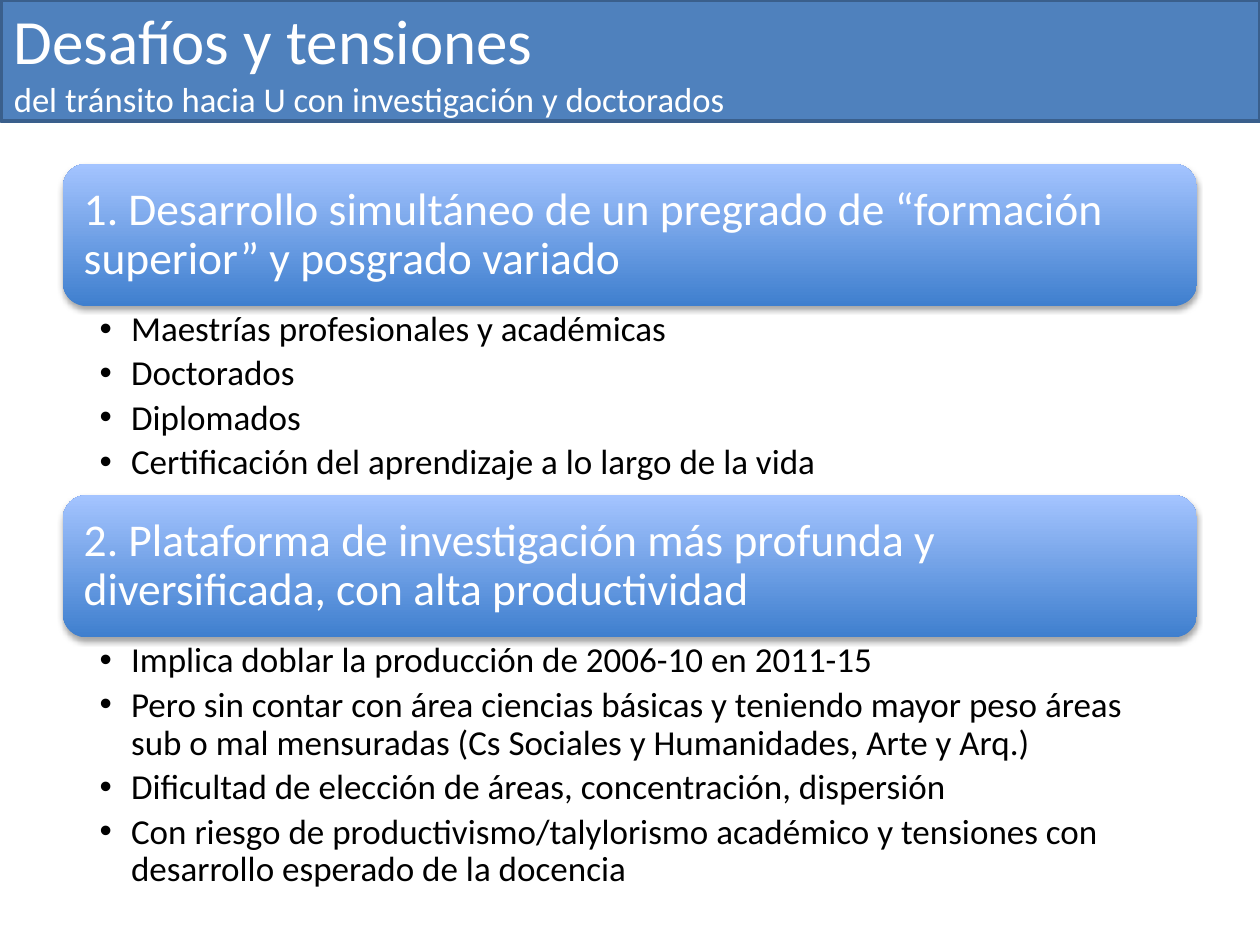
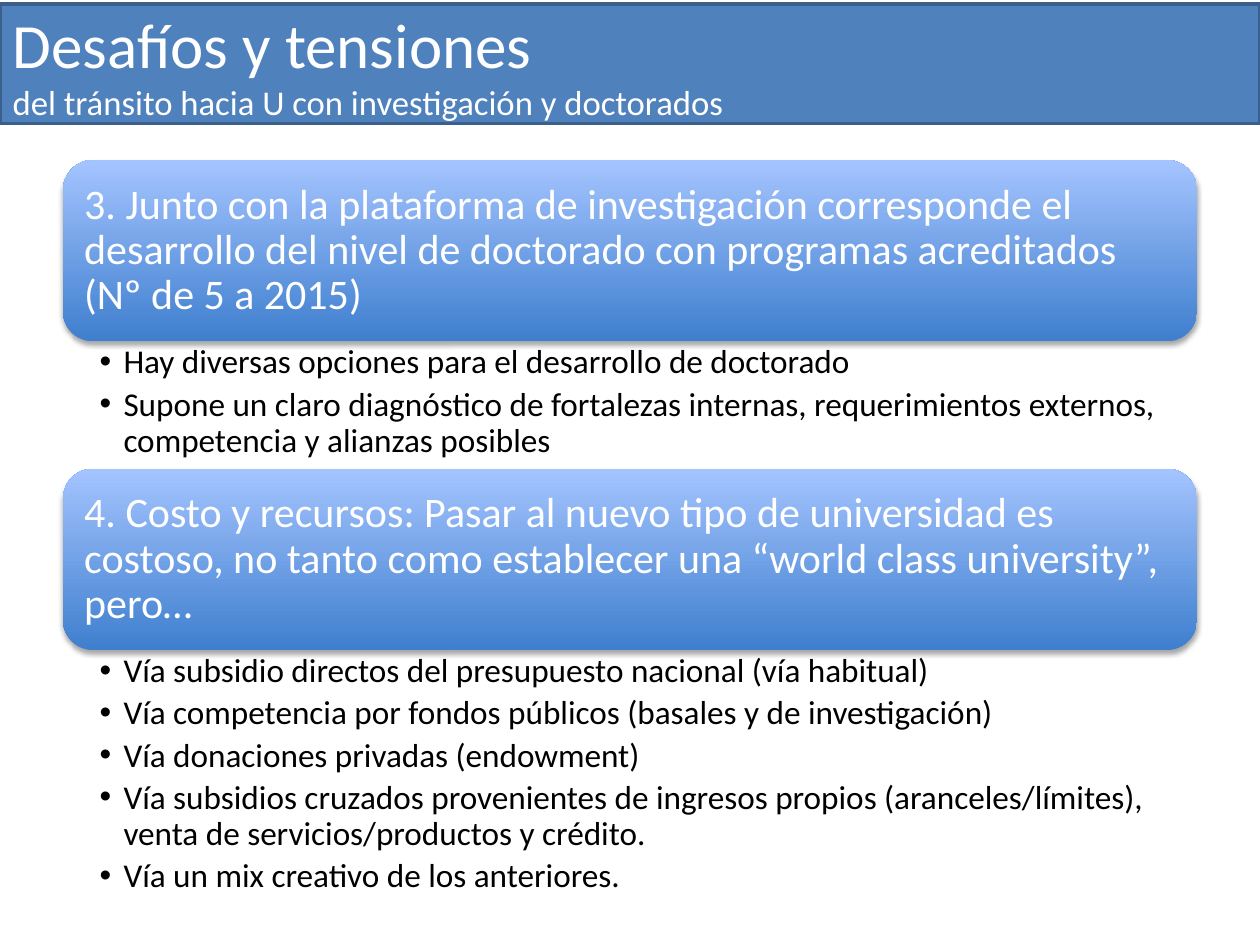
from dataclasses import dataclass
from typing import Any

from lxml.etree import SubElement
from pptx import Presentation
from pptx.dml.color import RGBColor
from pptx.enum.shapes import MSO_SHAPE
from pptx.enum.text import MSO_ANCHOR, MSO_AUTO_SIZE, PP_ALIGN
from pptx.oxml.ns import qn
from pptx.util import Inches, Pt

# Shared look
COLORS = {
    "band": "4F81BD",
    "band_edge": "3A5F8C",
    "heading_bottom": "3F7FCE",
    "heading_top": "A4C4FF",
    "light": "FFFFFF",
    "dark": "000000",
}
FONT = "Calibri"
TITLE = "Desafíos y tensiones"
SUBTITLE = "del tránsito hacia U con investigación y doctorados"
LEFT, WIDTH = 0.5, 9
TWO_CONTENT = 3


@dataclass(frozen=True)
class Challenge:
    heading: str
    points: list[str]
    list_height: float


@dataclass(frozen=True)
class ChallengeSlide:
    band: tuple[float, float, float, float]
    top: float
    heading_height: float
    heading_size: float
    heading_inset: float
    point_size: float
    hanging: float
    list_insets: tuple[float, float, float, float]
    challenges: list[Challenge]


# Content
SLIDES = [
    ChallengeSlide(
        band=(0.01, 0, 9.99, 0.96),
        top=1.3, heading_height=1.13, heading_size=26, heading_inset=0.11,
        point_size=20, hanging=0.25, list_insets=(0.29, 0.04, 0.2, 0.04),
        challenges=[
            Challenge(
                "1. Desarrollo simultáneo de un pregrado de “formación superior” "
                "y posgrado variado",
                [
                    "Maestrías profesionales y académicas",
                    "Doctorados",
                    "Diplomados",
                    "Certificación del aprendizaje a lo largo de la vida",
                ],
                1.5,
            ),
            Challenge(
                "2. Plataforma de investigación más profunda y diversificada, "
                "con alta productividad",
                [
                    "Implica doblar la producción de 2006-10 en 2011-15",
                    "Pero sin contar con área ciencias básicas y teniendo mayor peso "
                    "áreas sub o mal mensuradas (Cs Sociales y Humanidades, Arte y Arq.)",
                    "Dificultad de elección de áreas, concentración, dispersión",
                    "Con riesgo de productivismo/talylorismo académico y tensiones "
                    "con desarrollo esperado de la docencia",
                ],
                2.12,
            ),
        ],
    ),
    ChallengeSlide(
        band=(0, 0.03, 10, 0.95),
        top=1.27, heading_height=1.44, heading_size=24, heading_inset=0.1,
        point_size=19, hanging=0.19, list_insets=(0.29, 0.03, 0.19, 0.03),
        challenges=[
            Challenge(
                "3. Junto con la plataforma de investigación corresponde el desarrollo "
                "del nivel de doctorado con programas acreditados (Nº de 5 a 2015)",
                [
                    "Hay diversas opciones para el desarrollo de doctorado",
                    "Supone un claro diagnóstico de fortalezas internas, requerimientos "
                    "externos, competencia y alianzas posibles",
                ],
                1.01,
            ),
            Challenge(
                "4. Costo y recursos: Pasar al nuevo tipo de universidad es costoso, "
                "no tanto como establecer una “world class university”, pero…",
                [
                    "Vía subsidio directos del presupuesto nacional (vía habitual)",
                    "Vía competencia por fondos públicos (basales y de investigación)",
                    "Vía donaciones privadas (endowment)",
                    "Vía subsidios cruzados provenientes de ingresos propios "
                    "(aranceles/límites), venta de servicios/productos y crédito.",
                    "Vía un mix creativo de los anteriores.",
                ],
                2.06,
            ),
        ],
    ),
]


# Formatting helpers
def rgb(name: str) -> RGBColor:
    return RGBColor.from_string(COLORS[name])


def apply_format(target: Any, values: dict[str, Any]) -> None:
    for attribute, value in values.items():
        setattr(target, attribute, value)


def place(shape: Any, left: float, top: float, width: float, height: float) -> None:
    apply_format(shape, {
        "left": Inches(left), "top": Inches(top),
        "width": Inches(width), "height": Inches(height),
    })


def format_frame(frame: Any, anchor: MSO_ANCHOR,
                 insets: tuple[float, float, float, float]) -> None:
    left, top, right, bottom = map(Inches, insets)
    apply_format(frame, {
        "word_wrap": True, "auto_size": MSO_AUTO_SIZE.NONE, "vertical_anchor": anchor,
        "margin_left": left, "margin_top": top,
        "margin_right": right, "margin_bottom": bottom,
    })


def add_text(paragraph: Any, text: str, size: float, color: str) -> None:
    run = paragraph.add_run()
    run.text = text
    apply_format(run.font, {"name": FONT, "size": Pt(size)})
    run.font.color.rgb = rgb(color)


def add_soft_shadow(shape: Any) -> None:
    shape.shadow.inherit = False
    effects = shape._element.spPr.find(qn("a:effectLst"))
    shadow = SubElement(effects, qn("a:outerShdw"), {
        "blurRad": str(Pt(3.1)), "dist": str(Pt(1.8)),
        "dir": "5400000", "rotWithShape": "0",
    })
    tint = SubElement(shadow, qn("a:srgbClr"), val=COLORS["dark"])
    SubElement(tint, qn("a:alpha"), val="35000")


# Slide parts
def draw_title_band(title: Any, band: tuple[float, float, float, float]) -> None:
    place(title, *band)
    title.fill.solid()
    title.fill.fore_color.rgb = rgb("band")
    title.line.color.rgb = rgb("band_edge")
    title.line.width = Pt(2)
    format_frame(title.text_frame, MSO_ANCHOR.MIDDLE, (0.1, 0.05, 0.1, 0.05))
    paragraph = title.text_frame.paragraphs[0]
    paragraph.alignment = PP_ALIGN.LEFT
    add_text(paragraph, TITLE, 36, "light")
    paragraph.add_line_break()
    add_text(paragraph, SUBTITLE, 19.8, "light")


def draw_heading(slide: Any, text: str, top: float, style: ChallengeSlide) -> None:
    heading = slide.shapes.add_shape(
        MSO_SHAPE.ROUNDED_RECTANGLE, Inches(LEFT), Inches(top),
        Inches(WIDTH), Inches(style.heading_height))
    heading.fill.gradient()
    heading.fill.gradient_angle = 90
    for stop, color in zip(heading.fill.gradient_stops, ("heading_bottom", "heading_top")):
        stop.color.rgb = rgb(color)
    heading.line.fill.background()
    add_soft_shadow(heading)
    format_frame(heading.text_frame, MSO_ANCHOR.MIDDLE, (style.heading_inset,) * 4)
    paragraph = heading.text_frame.paragraphs[0]
    apply_format(paragraph, {"alignment": PP_ALIGN.LEFT, "line_spacing": 0.9})
    add_text(paragraph, text, style.heading_size, "light")


def fill_points(body: Any, challenge: Challenge, top: float, style: ChallengeSlide) -> None:
    place(body, LEFT, top, WIDTH, challenge.list_height)
    frame = body.text_frame
    format_frame(frame, MSO_ANCHOR.TOP, style.list_insets)
    hanging = Inches(style.hanging)
    for index, point in enumerate(challenge.points):
        paragraph = frame.add_paragraph() if index else frame.paragraphs[0]
        apply_format(paragraph, {
            "line_spacing": 0.9, "space_before": Pt(0),
            "space_after": Pt(0.19 * style.point_size),
        })
        properties = paragraph._p.get_or_add_pPr()
        properties.set("marL", str(hanging))
        properties.set("indent", str(-hanging))
        SubElement(properties, qn("a:buFont"), typeface="Arial")
        SubElement(properties, qn("a:buChar"), char="•")
        add_text(paragraph, point, style.point_size, "dark")


def build_slide(presentation: Any, content: ChallengeSlide) -> None:
    slide = presentation.slides.add_slide(presentation.slide_layouts[TWO_CONTENT])
    draw_title_band(slide.shapes.title, content.band)
    # Headings and lists stack without gaps
    top = content.top
    for index, challenge in enumerate(content.challenges, start=1):
        draw_heading(slide, challenge.heading, top, content)
        top += content.heading_height
        fill_points(slide.placeholders[index], challenge, top, content)
        top += challenge.list_height


def main() -> None:
    presentation = Presentation()
    apply_format(presentation, {"slide_width": Inches(10), "slide_height": Inches(7.5)})
    for content in SLIDES:
        build_slide(presentation, content)
    presentation.save("out.pptx")


if __name__ == "__main__":
    main()
